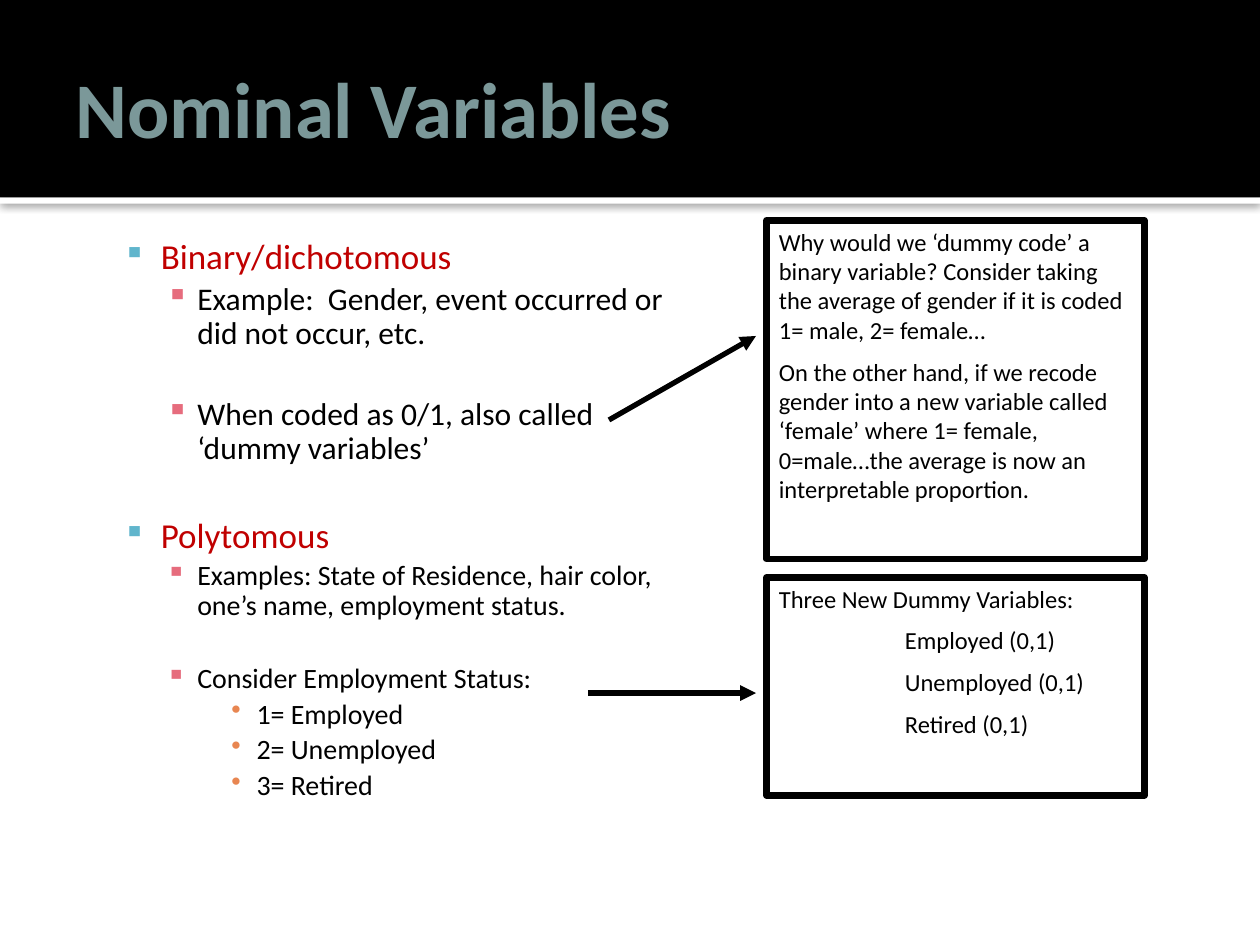
from collections import namedtuple
from dataclasses import dataclass

from lxml import etree
from pptx import Presentation
from pptx import util as u
from pptx.dml.color import RGBColor
from pptx.enum import shapes, text
from pptx.oxml import ns

Box = namedtuple("Box", "left top width height")
Level = namedtuple("Level", "margin hang bullet colour bullet_size")


@dataclass(frozen=True)
class Theme:
    font: str = "Calibri"
    black: str = "000000"
    white: str = "FFFFFF"
    title: str = "7B9899"
    heading: str = "C00000"
    title_size: int = 45
    heading_size: int = 20
    body_size: int = 18
    detail_size: int = 16
    note_size: int = 14
    arrow_width: float = 3
    frame_width: float = 3.78


THEME = Theme()
TOPIC = Level(0.8, 0.3, "▪", "60B5CC", 90)
POINT = Level(1.09, 0.25, "▪", "E66C7D", 100)
ITEM = Level(1.56, 0.2, "•", "E88651", 100)

# Outline rows: level, wording, size, colour, space before in points
OUTLINE = [
    (TOPIC, "Binary/dichotomous", THEME.heading_size, THEME.heading, 0),
    (POINT, "Example:  Gender, event occurred or did not occur, etc.",
     THEME.body_size, THEME.black, 3.6),
    (POINT, "When coded as 0/1, also called ‘dummy variables’",
     THEME.body_size, THEME.black, 27),
    (TOPIC, "Polytomous", THEME.heading_size, THEME.heading, 29.6),
    (POINT, "Examples: State of Residence, hair color, one’s name, employment status.",
     THEME.detail_size, THEME.black, 3.2),
    (POINT, "Consider Employment Status:", THEME.detail_size, THEME.black, 24),
    (ITEM, "1= Employed", THEME.detail_size, THEME.black, 3.2),
    (ITEM, "2= Unemployed", THEME.detail_size, THEME.black, 3.2),
    (ITEM, "3= Retired", THEME.detail_size, THEME.black, 3.2),
]
# Note rows: wording, left indent in inches
CODING_NOTE = [
    ("Why would we ‘dummy code’ a binary variable? Consider taking the average "
     "of gender if it is coded 1= male, 2= female…", 0),
    ("On the other hand, if we recode gender into a new variable called "
     "‘female’ where 1= female, 0=male…the average is now an interpretable "
     "proportion.", 0),
]
DUMMY_NOTE = [
    ("Three New Dummy Variables:", 0),
    ("Employed (0,1)", 1),
    ("Unemployed (0,1)", 1),
    ("Retired (0,1)", 1),
]


def grid(units):
    """Length of a number of grid units, twelve to the inch."""
    return u.Inches(units / 12)


def add_xml(parent, tag, **attributes):
    return etree.SubElement(parent, ns.qn(tag), attributes)


def write(frame, wording, size, colour=THEME.black, bold=False, before=0,
          spacing=1.0, margin=0, hang=0):
    """Write one paragraph, reusing the empty first one of the frame."""
    para = frame.paragraphs[0]
    if para.runs:
        para = frame.add_paragraph()
    para.alignment = text.PP_ALIGN.LEFT
    para.line_spacing = spacing
    para.space_before = u.Pt(before)
    properties = para._p.get_or_add_pPr()
    properties.set("marL", str(u.Inches(margin)))
    properties.set("indent", str(u.Inches(-hang)))
    span = para.add_run()
    span.text = wording
    span.font.name = THEME.font
    span.font.size = u.Pt(size)
    span.font.bold = bold
    span.font.color.rgb = RGBColor.from_string(colour)
    return para


def add_bullet(para, level):
    properties = para._p.get_or_add_pPr()
    add_xml(add_xml(properties, "a:buClr"), "a:srgbClr", val=level.colour)
    add_xml(properties, "a:buSzPct", val=str(level.bullet_size * 1000))
    add_xml(properties, "a:buChar", char=level.bullet)


def add_rectangle(page, box, fill, border=None):
    shape = page.shapes.add_shape(
        shapes.MSO_SHAPE.RECTANGLE, *map(grid, box))
    shape.shadow.inherit = False
    shape.fill.solid()
    shape.fill.fore_color.rgb = RGBColor.from_string(fill)
    if border:
        shape.line.color.rgb = RGBColor.from_string(border)
        shape.line.width = u.Pt(THEME.frame_width)
    else:
        shape.line.fill.background()
    return shape


def add_text_frame(page, box, insets, anchor=text.MSO_ANCHOR.TOP):
    frame = page.shapes.add_textbox(*map(grid, box)).text_frame
    frame.word_wrap = True
    frame.vertical_anchor = anchor
    (frame.margin_left, frame.margin_top,
     frame.margin_right, frame.margin_bottom) = map(u.Inches, insets)
    return frame


def add_header(page, box):
    """Black band with the title, above a white strip that casts a shadow."""
    strip = add_rectangle(
        page, Box(box.left, box.top + box.height, box.width, 0.6), THEME.white)
    effects = strip._element.spPr.find(ns.qn("a:effectLst"))
    shadow = add_xml(effects, "a:outerShdw", blurRad=str(u.Pt(5)),
                     dist=str(u.Pt(0.8)), dir="5400000", rotWithShape="0")
    colour = add_xml(shadow, "a:srgbClr", val=THEME.black)
    add_xml(colour, "a:alpha", val="60000")
    add_rectangle(page, box, THEME.black)
    title = Box(box.left + 6, box.top + 2, box.width - 12, box.height - 2.4)
    frame = add_text_frame(page, title, (0.1, 0.05, 0.05, 0.05),
                           text.MSO_ANCHOR.MIDDLE)
    write(frame, "Nominal Variables", THEME.title_size, THEME.title, bold=True)


def add_outline(page, box):
    frame = add_text_frame(page, box, (0.06, 0.48, 0.1, 0.05))
    for level, wording, size, colour, before in OUTLINE:
        para = write(frame, wording, size, colour, before=before, spacing=0.9,
                     margin=level.margin, hang=level.hang)
        add_bullet(para, level)


def add_note(page, box, rows):
    frame = add_rectangle(page, box, THEME.white, THEME.black).text_frame
    frame.word_wrap = True
    frame.vertical_anchor = text.MSO_ANCHOR.TOP
    for number, (wording, margin) in enumerate(rows):
        write(frame, wording, THEME.note_size, margin=margin,
              before=THEME.note_size / 2 if number else 0)


def add_arrow(page, start, end):
    arrow = page.shapes.add_connector(
        shapes.MSO_CONNECTOR.STRAIGHT, *map(grid, start + end))
    arrow.line.color.rgb = RGBColor.from_string(THEME.black)
    arrow.line.width = u.Pt(THEME.arrow_width)
    add_xml(arrow.line._get_or_add_ln(), "a:tailEnd", type="triangle")
    add_xml(arrow._element.spPr, "a:effectLst")


def main():
    deck = Presentation()
    deck.slide_width, deck.slide_height = grid(120), grid(90)
    page = deck.slides.add_slide(deck.slide_layouts[6])
    add_header(page, Box(0, 0, 120, 18.8))
    add_outline(page, Box(5, 17, 60, 59.5))
    add_arrow(page, (56, 66), (72, 66))
    add_note(page, Box(73, 55, 36, 20.75), DUMMY_NOTE)
    add_arrow(page, (58, 40), (72, 32))
    add_note(page, Box(73, 21, 36, 32.25), CODING_NOTE)
    deck.save("out.pptx")


if __name__ == "__main__":
    main()
